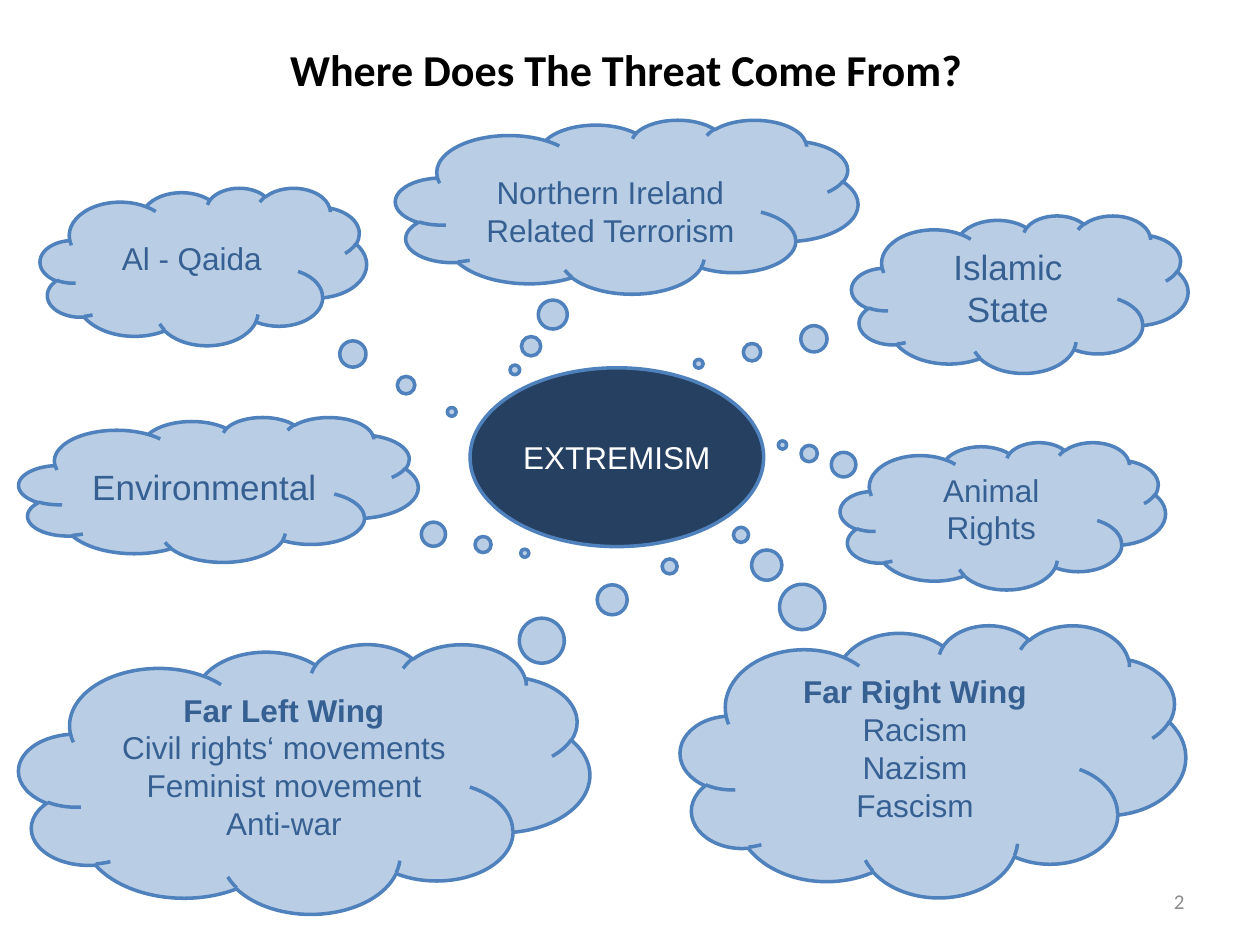
from dataclasses import dataclass

from pptx import Presentation
from pptx import util as u
from pptx.dml.color import RGBColor
from pptx.enum import shapes, text


@dataclass(frozen=True)
class Theme:
    sky: str = "B9CDE5"
    edge: str = "4F81BD"
    navy: str = "254061"
    ink: str = "376092"
    white: str = "FFFFFF"
    black: str = "000000"
    gray: str = "8C8C8C"
    body: str = "Arial"
    head: str = "Calibri"
    title: float = 25.2
    large: float = 20
    normal: float = 18
    small: float = 12
    stroke: float = 2


class Deck:
    def __init__(self, theme):
        self.theme = theme
        self.prs = Presentation()
        self.prs.slide_width = u.Pt(720)
        self.prs.slide_height = u.Pt(540)
        self.slide = self.prs.slides.add_slide(self.prs.slide_layouts[6])

    def fill_text(self, frame, lines, size, color, font,
                  align=text.PP_ALIGN.CENTER, bold=False, middle=True, wrap=True):
        frame.word_wrap = wrap
        frame.vertical_anchor = (text.MSO_ANCHOR.MIDDLE if middle
                                 else text.MSO_ANCHOR.TOP)
        for i, line in enumerate(lines):
            para = frame.paragraphs[0] if i == 0 else frame.add_paragraph()
            para.text = line
            para.alignment = align
            para.font.name = font
            para.font.size = u.Pt(size)
            para.font.bold = bold and i == 0
            para.font.color.rgb = RGBColor.from_string(color)

    def shape(self, kind, box, fill):
        item = self.slide.shapes.add_shape(kind, *map(u.Pt, box))
        item.shadow.inherit = False
        item.fill.solid()
        item.fill.fore_color.rgb = RGBColor.from_string(fill)
        item.line.color.rgb = RGBColor.from_string(self.theme.edge)
        item.line.width = u.Pt(self.theme.stroke)
        return item

    def cloud(self, box, tail, lines, size, bold=False, middle=False, drop=0):
        item = self.shape(shapes.MSO_SHAPE.CLOUD_CALLOUT, box, self.theme.sky)
        item.adjustments[0], item.adjustments[1] = tail
        item.text_frame.margin_top = u.Pt(3.6 + drop)
        self.fill_text(item.text_frame, lines, size, self.theme.ink,
                       self.theme.body, bold=bold, middle=middle)

    def oval(self, box, label):
        item = self.shape(shapes.MSO_SHAPE.OVAL, box, self.theme.navy)
        self.fill_text(item.text_frame, [label], self.theme.normal,
                       self.theme.white, self.theme.body, wrap=False)

    def label(self, box, line, size, color, **style):
        item = self.slide.shapes.add_textbox(*map(u.Pt, box))
        self.fill_text(item.text_frame, [line], size, color,
                       self.theme.head, **style)


def main():
    theme = Theme()
    deck = Deck(theme)
    deck.cloud((10.8, 367.9, 326.2, 154.1), (0.64, -0.787),
               ["Far Left Wing", "Civil rights‘ movements",
                "Feminist movement", "Anti-war"], theme.normal, bold=True)
    deck.cloud((23, 107.3, 186.5, 90), (0.761, 0.923),
               ["Al - Qaida"], theme.normal, drop=12)
    deck.cloud((226.1, 68.4, 264.2, 99.4), (-0.242, 0.938),
               ["Northern Ireland Related Terrorism"], theme.normal, drop=12)
    deck.cloud((388.8, 357.1, 288.7, 155.5), (-0.38, -0.831),
               ["Far Right Wing", "Racism", "Nazism", "Fascism"],
               theme.normal, bold=True)
    deck.cloud((486.7, 123.1, 192.2, 90), (-0.955, 0.442),
               ["Islamic State"], theme.large)
    deck.cloud((10.8, 238.3, 228.2, 82.8), (0.767, 0.44),
               ["Environmental"], theme.large, middle=True)
    deck.cloud((480.2, 252.7, 185.8, 84.2), (-0.678, -0.481),
               ["Animal Rights"], theme.normal)
    deck.label((83.5, 19.4, 548.6, 40.3), "Where Does The Threat Come From?",
               theme.title, theme.black, bold=True)
    deck.oval((268.6, 210.2, 167.8, 102.2), "EXTREMISM")
    deck.label((516.2, 500.4, 167.8, 28.8), "2", theme.small, theme.gray,
               align=text.PP_ALIGN.RIGHT)
    deck.prs.save("out.pptx")


if __name__ == "__main__":
    main()
